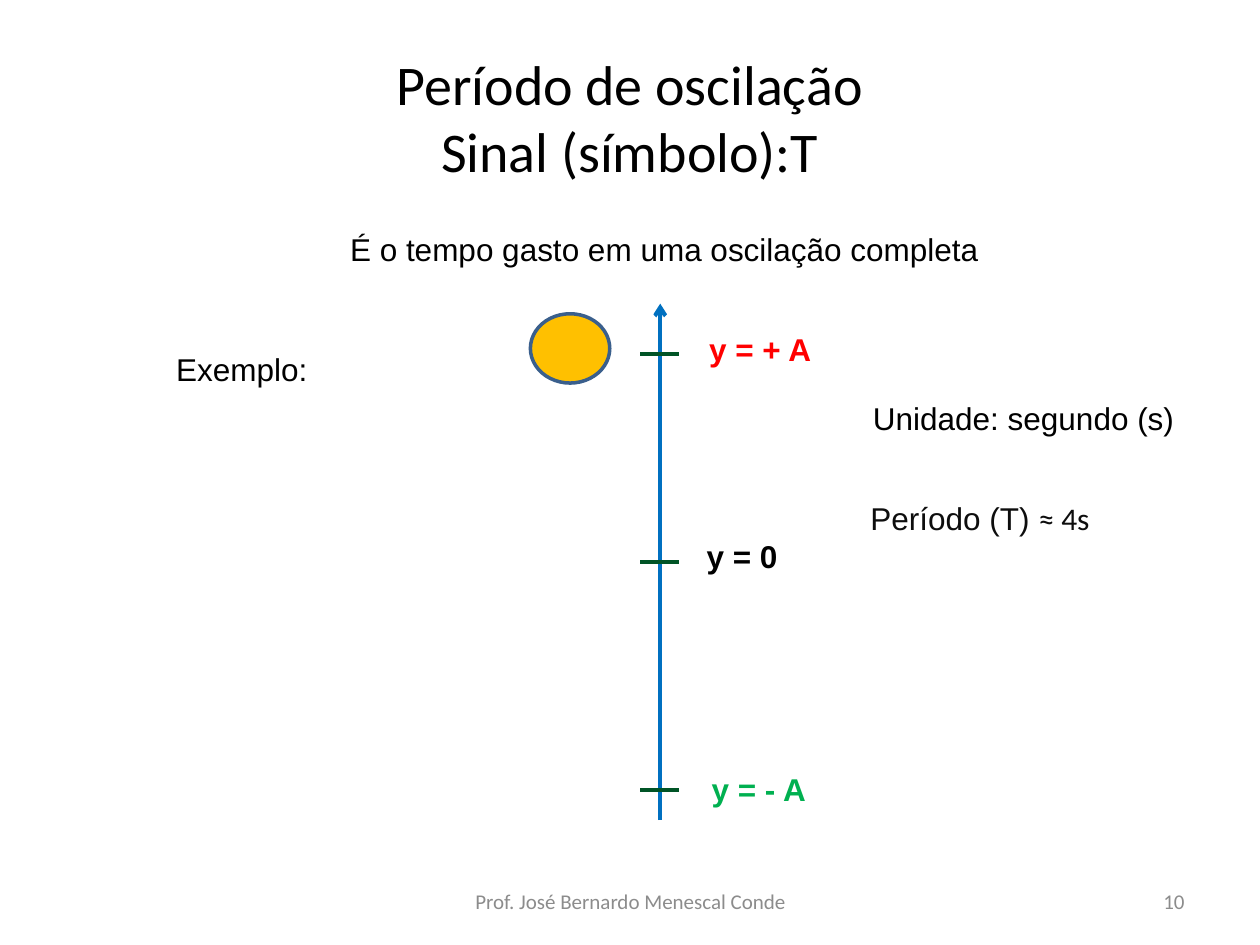
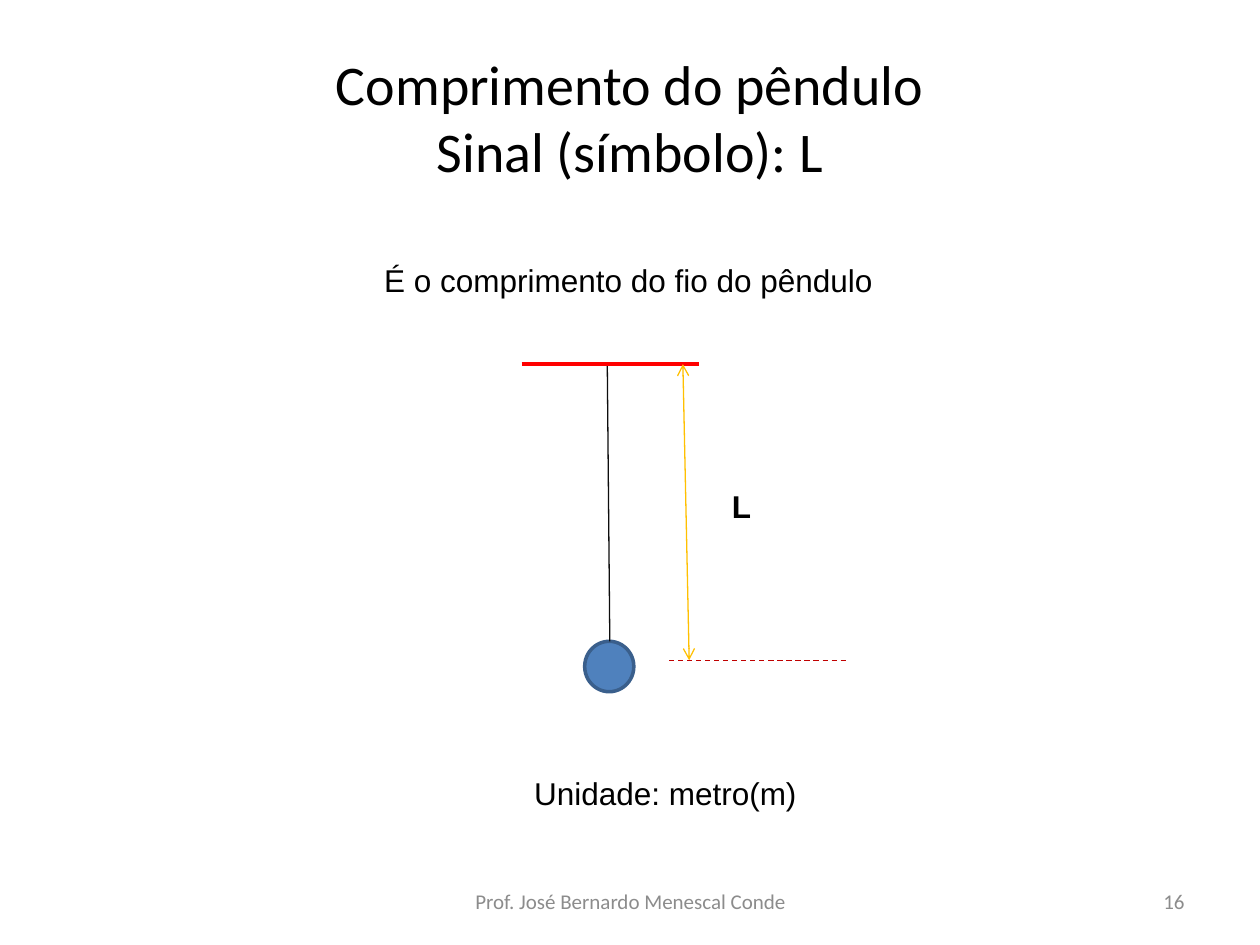
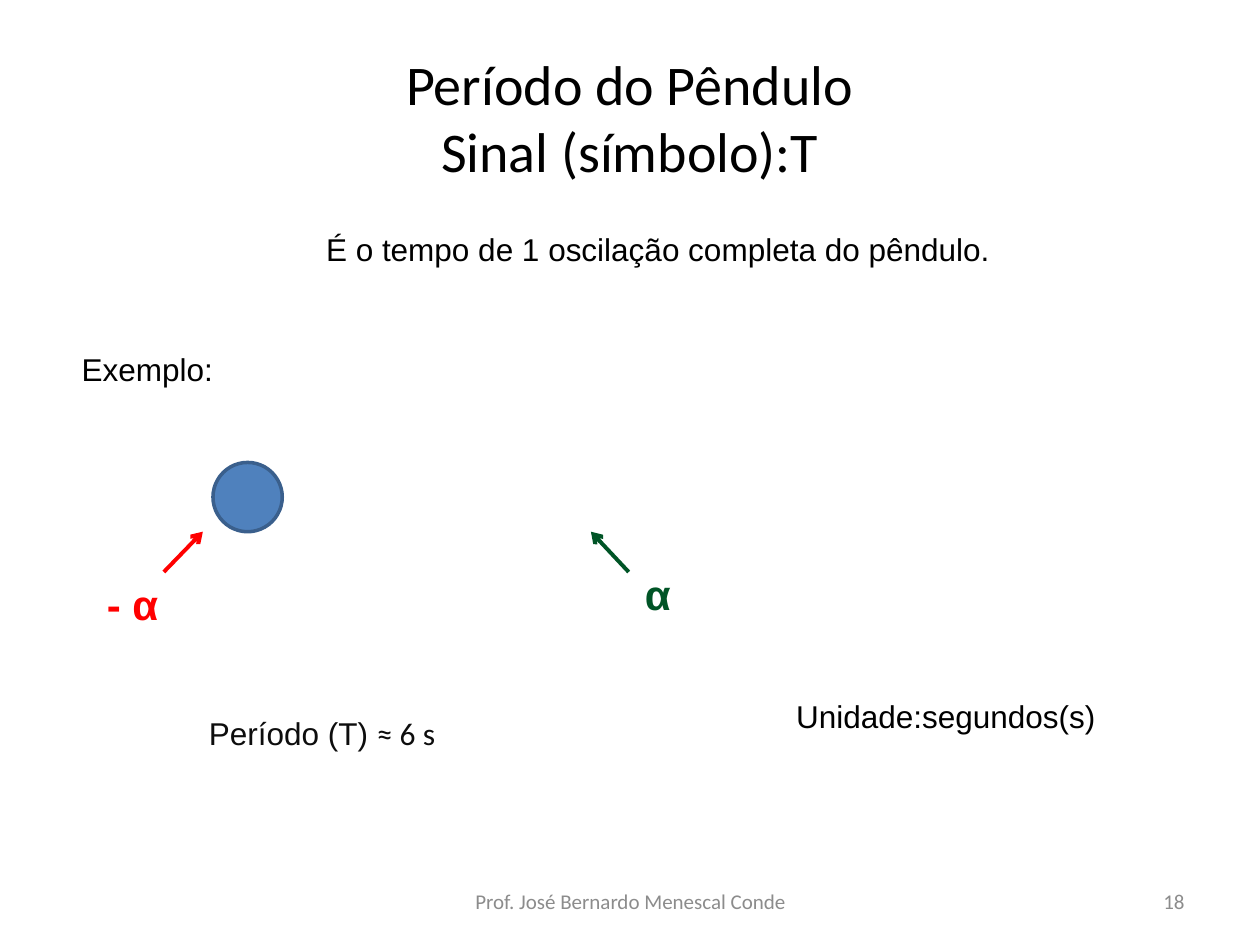
import pptx
import pptx.dml.color
import pptx.enum.dml
import pptx.enum.shapes
import pptx.enum.text
import pptx.oxml.ns
import pptx.util
from lxml import etree

# The slide is a grid of 100 columns by 75 rows; places and sizes count them.
SLIDE_WIDTH = pptx.util.Inches(10)
SLIDE_HEIGHT = pptx.util.Inches(7.5)
COLUMNS, ROWS = 100, 75

BLACK, SOFT_BLACK, GREY = "000000", "0D0D0D", "8C8C8C"
RED, DARK_RED, GREEN, DARK_GREEN = "FF0000", "C00000", "00B050", "005426"
AMBER, BLUE, AXIS_BLUE, BALL_OUTLINE = "FFC000", "4F81BD", "0070C0", "3A5F8C"

BODY_FONT, TITLE_FONT = "Arial", "Calibri"
FOOTER = "Prof. José Bernardo Menescal Conde"

LEFT = pptx.enum.text.PP_ALIGN.LEFT
CENTER = pptx.enum.text.PP_ALIGN.CENTER
RIGHT = pptx.enum.text.PP_ALIGN.RIGHT
TOP = pptx.enum.text.MSO_ANCHOR.TOP
MIDDLE = pptx.enum.text.MSO_ANCHOR.MIDDLE


def column(count):
    return round(SLIDE_WIDTH * count / COLUMNS)


def row(count):
    return round(SLIDE_HEIGHT * count / ROWS)


def color(hex_string):
    return pptx.dml.color.RGBColor.from_string(hex_string)


def write_text(slide, text, left, top, width, height=4, *, size=18,
               font=BODY_FONT, fill=BLACK, bold=False, align=LEFT, anchor=TOP,
               indent=0, wrap=True, ending=""):
    """Add a text box; the ending is a second run in the title font."""
    box = slide.shapes.add_textbox(column(left), row(top), column(width), row(height))
    frame = box.text_frame
    frame.word_wrap = wrap
    frame.vertical_anchor = anchor
    paragraph = frame.paragraphs[0]
    paragraph.alignment = align
    paragraph.text = text
    if indent:
        properties = paragraph._p.get_or_add_pPr()
        properties.set("marL", str(column(indent)))
        properties.set("indent", "0")
    styled_runs = [(run, font) for run in paragraph.runs]
    if ending:
        ending_run = paragraph.add_run()
        ending_run.text = ending
        styled_runs.append((ending_run, TITLE_FONT))
    for run, run_font in styled_runs:
        run.font.name = run_font
        run.font.size = pptx.util.Pt(size)
        run.font.bold = bold
        run.font.color.rgb = color(fill)


def draw_ball(slide, left, top, width, height, fill):
    ball = slide.shapes.add_shape(
        pptx.enum.shapes.MSO_SHAPE.OVAL,
        column(left), row(top), column(width), row(height))
    ball.shadow.inherit = False
    ball.fill.solid()
    ball.fill.fore_color.rgb = color(fill)
    ball.line.color.rgb = color(BALL_OUTLINE)
    ball.line.width = pptx.util.Pt(2)


def draw_line(slide, start, end, stroke, width=2.25, *, dashed=False, arrows=()):
    """Draw a line; arrows names its pointed ends: headEnd (start), tailEnd (end)."""
    line = slide.shapes.add_connector(
        pptx.enum.shapes.MSO_CONNECTOR.STRAIGHT,
        column(start[0]), row(start[1]), column(end[0]), row(end[1]))
    line.line.color.rgb = color(stroke)
    line.line.width = pptx.util.Pt(width)
    if dashed:
        line.line.dash_style = pptx.enum.dml.MSO_LINE.DASH
    outline = line.line._get_or_add_ln()
    for arrow in arrows:
        etree.SubElement(outline, pptx.oxml.ns.qn(f"a:{arrow}"), type="arrow")
    etree.SubElement(line._element.spPr, pptx.oxml.ns.qn("a:effectLst"))


def add_lesson_slide(presentation, title, number):
    slide = presentation.slides.add_slide(presentation.slide_layouts[6])
    write_text(slide, title, 5, 3, 90, 12.5, size=32, font=TITLE_FONT,
               align=CENTER, anchor=MIDDLE)
    footer_style = dict(size=12, font=TITLE_FONT, fill=GREY, anchor=MIDDLE)
    write_text(slide, FOOTER, 34.2, 69.5, 31.7, align=CENTER, **footer_style)
    write_text(slide, str(number), 71.7, 69.5, 23.3, align=RIGHT, **footer_style)
    return slide


def build_oscillation_period(presentation):
    slide = add_lesson_slide(presentation, "Período de oscilação\nSinal (símbolo):T", 10)
    write_text(slide, "É o tempo gasto em uma oscilação completa",
               18.5, 17.8, 62.5, indent=8.3)
    write_text(slide, "Exemplo:", 13, 27.3, 16.2)
    write_text(slide, "Unidade: segundo (s)", 63.4, 31.2, 33.6, indent=4.9)
    write_text(slide, "Período (T) ", 68.1, 39.1, 25.8, fill=SOFT_BLACK, ending="≈ 4s")
    draw_ball(slide, 42.1, 24.9, 6.3, 5.5, AMBER)

    axis = 52.4
    draw_line(slide, (axis, 65.1), (axis, 24.1), AXIS_BLUE, arrows=["tailEnd"])
    positions = [
        ("y = + A", RED, 28.1, 55.3, 25.7),
        ("y = 0", BLACK, 44.6, 55.1, 42.1),
        ("y = - A", GREEN, 62.7, 55.5, 60.6),
    ]
    for label, fill, tick, left, top in positions:
        draw_line(slide, (axis - 1.6, tick), (axis + 1.5, tick), DARK_GREEN)
        write_text(slide, label, left, top, 11, fill=fill, bold=True)


def build_pendulum_length(presentation):
    slide = add_lesson_slide(presentation, "Comprimento do pêndulo\nSinal (símbolo): L", 16)
    write_text(slide, "É o comprimento do fio do pêndulo", 29.5, 20.2, 46.9)
    write_text(slide, "Unidade: metro(m)", 41.4, 60.9, 30.5)
    write_text(slide, "L", 57.1, 38.2, 3.6, bold=True, wrap=False)

    support, ball_level = 28.9, 52.4
    draw_ball(slide, 46.4, 50.9, 3.9, 4, BLUE)
    draw_line(slide, (48.2, support), (48.4, 50.9), SOFT_BLACK, 0.75)
    draw_line(slide, (41.4, support), (55.5, support), RED, 2)
    draw_line(slide, (54.2, support), (54.7, ball_level), AMBER, 0.75,
              arrows=["headEnd", "tailEnd"])
    draw_line(slide, (53.1, ball_level), (67.3, ball_level), DARK_RED, 0.75, dashed=True)


def build_pendulum_period(presentation):
    slide = add_lesson_slide(presentation, "Período do Pêndulo\nSinal (símbolo):T", 18)
    write_text(slide, "É o tempo de 1 oscilação completa do pêndulo.",
               19.3, 17.8, 63.3, indent=5.6)
    write_text(slide, "Exemplo:", 5.5, 27.3, 80.5)
    write_text(slide, "Período (T) ", 15.6, 56.2, 29.7, fill=SOFT_BLACK, ending="≈ 6 s")
    write_text(slide, "Unidade:segundos(s)", 53.9, 54.8, 39.1, indent=8.3)
    draw_ball(slide, 16.9, 36.7, 5.5, 5.5, BLUE)

    angles = [
        ("- α", RED, 7.5, 45.4, 6.3, 13, 16.1),
        ("α", DARK_GREEN, 50.2, 44.6, 4.5, 49.9, 46.9),
    ]
    for label, fill, left, top, width, arrow_start, arrow_end in angles:
        write_text(slide, label, left, top, width, 5, size=24, fill=fill, bold=True)
        draw_line(slide, (arrow_start, 45.4), (arrow_end, 42.2), fill, arrows=["tailEnd"])


def main():
    presentation = pptx.Presentation()
    presentation.slide_width = SLIDE_WIDTH
    presentation.slide_height = SLIDE_HEIGHT
    build_oscillation_period(presentation)
    build_pendulum_length(presentation)
    build_pendulum_period(presentation)
    presentation.save("out.pptx")


if __name__ == "__main__":
    main()
